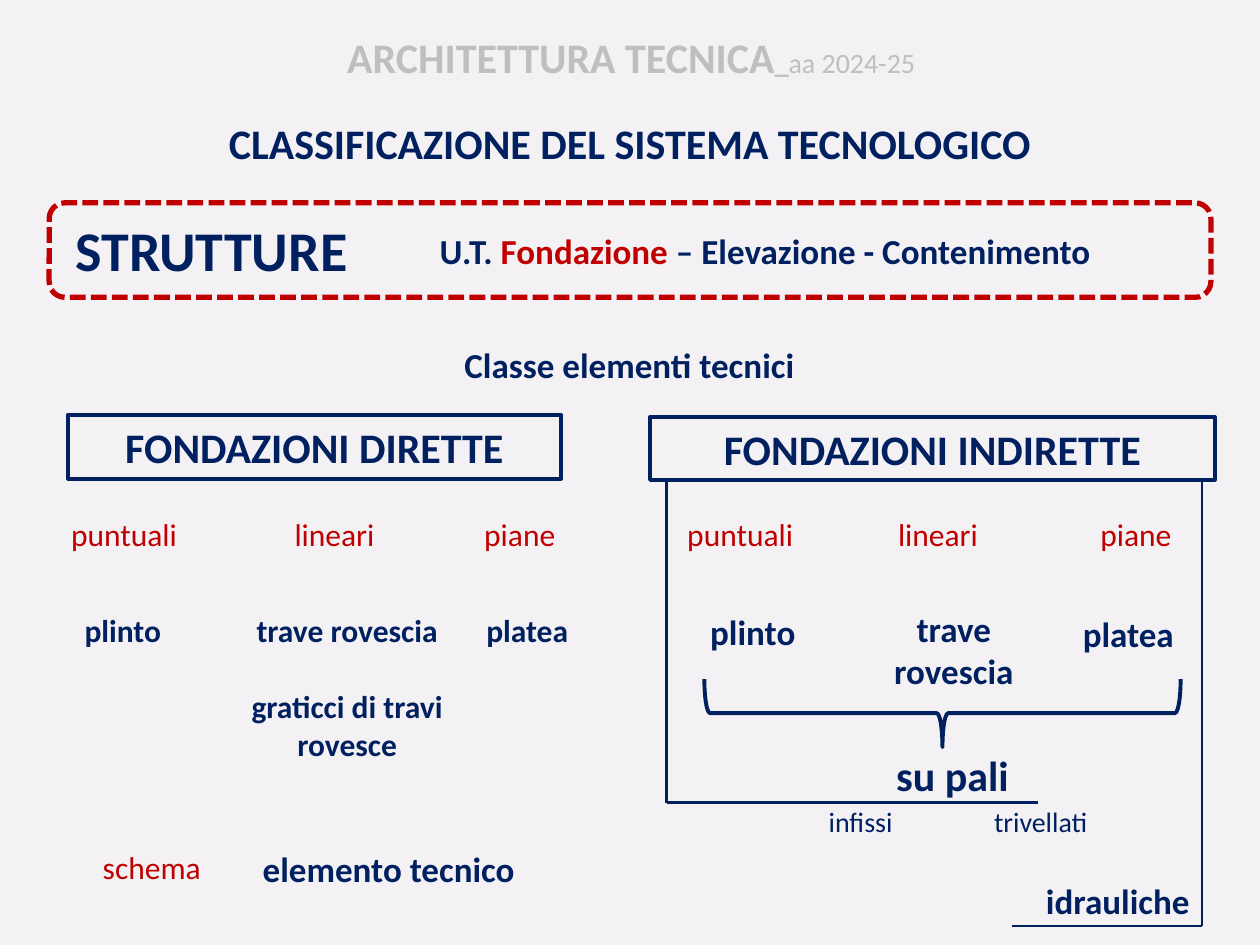
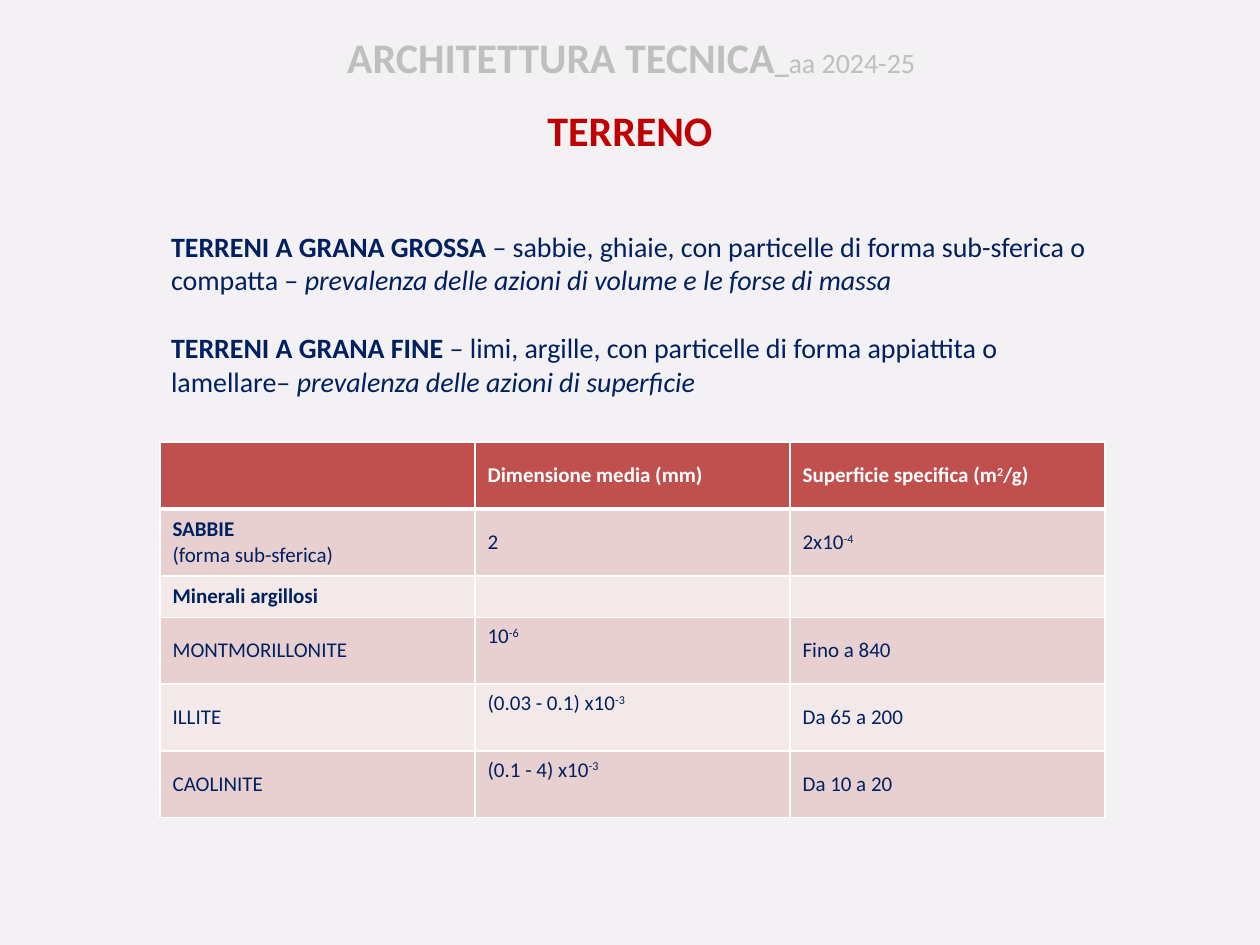
import dataclasses

import lxml.etree
import pptx
import pptx.dml.color
import pptx.enum.dml
import pptx.enum.shapes
import pptx.enum.text
import pptx.oxml.ns
import pptx.util

Inches = pptx.util.Inches
Pt = pptx.util.Pt
Align = pptx.enum.text.PP_ALIGN
Anchor = pptx.enum.text.MSO_ANCHOR
Shape = pptx.enum.shapes.MSO_SHAPE


@dataclasses.dataclass(frozen=True)
class Theme:
    font: str = "Calibri"
    background: str = "F3F1F3"
    navy: str = "002060"
    red: str = "C00000"
    gray: str = "BFBFBF"
    white: str = "FFFFFF"
    table_header: str = "C0504D"
    bands: tuple = ("E8D0D0", "F4E9E9")
    display: int = 32
    title: int = 24
    heading: int = 20
    label: int = 18
    body: int = 16
    cell: int = 12


theme = Theme()


def style(size, color=theme.navy, bold=False, italic=False):
    return {"size": Pt(size), "color": color, "bold": bold, "italic": italic}


STYLES = {
    "course": style(theme.title, theme.gray, True),
    "course_joint": style(theme.body, theme.gray, True),
    "course_year": style(theme.body, theme.gray),
    "title": style(theme.title, bold=True),
    "red_title": style(theme.title, theme.red, True),
    "display": style(theme.display, bold=True),
    "heading": style(theme.heading, bold=True),
    "red_heading": style(theme.heading, theme.red, True),
    "element": style(theme.label, bold=True),
    "scheme": style(theme.label, theme.red),
    "body": style(theme.body),
    "body_bold": style(theme.body, bold=True),
    "body_italic": style(theme.body, italic=True),
    "cell": style(theme.cell),
    "cell_bold": style(theme.cell, bold=True),
    "cell_header": style(theme.cell, theme.white, True),
}

COURSE = [[("ARCHITETTURA TECNICA", "course"), ("_", "course_joint"), ("aa 2024-25", "course_year")]]

UNITS = [[("U.T. ", "heading"), ("Fondazione", "red_heading"),
          (" – Elevazione - Contenimento", "heading")]]

LABELS = [
    ("Classe elementi tecnici", "heading", (2.87, 2.68, 4.25, 0.44)),
    ("CLASSIFICAZIONE DEL SISTEMA TECNOLOGICO", "title", (0, 0.88, 10, 0.51)),
    ("schema", "scheme", (0.62, 6.68, 1.17, 0.4)),
    ("elemento tecnico", "heading", (1.7, 6.68, 2.77, 0.44)),
    ("plinto", "element", (0.39, 4.8, 1.17, 0.4)),
    ("platea", "element", (3.6, 4.8, 1.17, 0.4)),
    ("plinto", "heading", (5.39, 4.8, 1.17, 0.44)),
    ("trave rovescia", "heading", (6.87, 4.77, 1.4, 0.77)),
    ("platea", "heading", (8.37, 4.81, 1.17, 0.44)),
    ("su pali", "title", (6.46, 5.9, 2.2, 0.5)),
    ("infissi", "body", (6.32, 6.34, 1.02, 0.37)),
    ("trivellati", "body", (7.59, 6.34, 1.34, 0.37)),
]
SCHEMES = ["puntuali", "lineari", "piane"]
SCHEME_LEFTS = [(0.4, 2.07, 3.54), (5.29, 6.86, 8.43)]
BEAMS = [[("trave rovescia", "element")], [("graticci di travi rovesce", "element")]]
FOUNDATIONS = [
    ("FONDAZIONI DIRETTE", (0.54, 3.29, 3.91, 0.51)),
    ("FONDAZIONI INDIRETTE", (5.16, 3.31, 4.48, 0.5)),
]
BRANCHES = [
    [(9.54, 3.81), (9.54, 7.35), (8.03, 7.35)],
    [(5.29, 3.81), (5.29, 6.37), (8.24, 6.37)],
]

SOILS = [
    [("TERRENI A GRANA GROSSA ", "body_bold"),
     ("– sabbie, ghiaie, con particelle di forma sub-sferica o compatta – ", "body"),
     ("prevalenza delle azioni di volume e le forse di massa", "body_italic")],
    [("TERRENI A GRANA FINE ", "body_bold"),
     ("– limi, argille, con particelle di forma appiattita o lamellare– ", "body"),
     ("prevalenza delle azioni di superficie", "body_italic")],
]
COLUMN_WIDTH = 2.5
ROW_HEIGHTS = [0.53, 0.53, 0.33, 0.53, 0.53, 0.53]
TABLE_ROWS = [
    ["", "Dimensione media (mm)", "Superficie specifica (m^2^/g)"],
    ["*SABBIE\n(forma sub-sferica)", "2", "2x10^-4"],
    ["*Minerali argillosi", "", ""],
    ["MONTMORILLONITE", "10^-6", "Fino a 840"],
    ["ILLITE", "(0.03 - 0.1) x10^-3", "Da 65 a 200"],
    ["CAOLINITE", "(0.1 - 4) x10^-3", "Da 10 a 20"],
]
FIRST_MINERAL_ROW = 3


def rgb(value):
    return pptx.dml.color.RGBColor.from_string(value)


def assign(target, values):
    for name, value in values.items():
        setattr(target, name, value)


def add_run(paragraph, text, style_name):
    run = paragraph.add_run()
    run.text = text
    values = dict(STYLES[style_name], name=theme.font)
    run.font.color.rgb = rgb(values.pop("color"))
    assign(run.font, values)
    return run


def write(frame, paragraphs, align=Align.CENTER, gap=0, spacing=None):
    frame.word_wrap = True
    for index, runs in enumerate(paragraphs):
        paragraph = frame.add_paragraph() if index else frame.paragraphs[0]
        assign(paragraph, {"alignment": align, "line_spacing": spacing,
                           "space_before": Pt(gap if index else 0)})
        for text, style_name in runs:
            add_run(paragraph, text, style_name)


def add_text(slide, box, paragraphs, anchor=Anchor.TOP, **options):
    frame = slide.shapes.add_textbox(*map(Inches, box)).text_frame
    frame.vertical_anchor = anchor
    write(frame, paragraphs, **options)


def add_outline(slide, kind, box, color, width):
    shape = slide.shapes.add_shape(kind, *map(Inches, box))
    shape.shadow.inherit = False
    shape.fill.background()
    shape.line.color.rgb = rgb(color)
    shape.line.width = Pt(width)
    return shape


def add_line(slide, start, end):
    line = slide.shapes.add_connector(
        pptx.enum.shapes.MSO_CONNECTOR.STRAIGHT, *map(Inches, start + end))
    line.line.color.rgb = rgb(theme.navy)
    line.line.width = Pt(1.5)
    lxml.etree.SubElement(line._element.spPr, pptx.oxml.ns.qn("a:effectLst"))


def add_slide(presentation):
    slide = presentation.slides.add_slide(presentation.slide_layouts[6])
    slide.background.fill.solid()
    slide.background.fill.fore_color.rgb = rgb(theme.background)
    add_text(slide, (1.26, -0.01, 7.5, 0.97), COURSE, Anchor.MIDDLE, spacing=0.9)
    return slide


def build_classification(presentation):
    slide = add_slide(presentation)
    add_text(slide, (0.5, 1.66, 2.99, 0.64), [[("STRUTTURE", "display")]], align=Align.LEFT)
    add_text(slide, (3.39, 1.77, 6.21, 0.44), UNITS, align=Align.LEFT)
    band = add_outline(slide, Shape.ROUNDED_RECTANGLE, (0.39, 1.61, 9.22, 0.75), theme.red, 3)
    band.line.dash_style = pptx.enum.dml.MSO_LINE.SQUARE_DOT
    for text, style_name, box in LABELS:
        add_text(slide, box, [[(text, style_name)]])
    for lefts in SCHEME_LEFTS:
        for text, left in zip(SCHEMES, lefts):
            add_text(slide, (left, 4.04, 1.17, 0.4), [[(text, "scheme")]])
    add_text(slide, (1.86, 4.8, 1.79, 1.31), BEAMS, gap=22)
    add_text(slide, (6.93, 6.93, 2.61, 0.44), [[("idrauliche", "heading")]], align=Align.RIGHT)
    for text, box in FOUNDATIONS:
        frame = add_outline(slide, Shape.RECTANGLE, box, theme.navy, 2.25).text_frame
        write(frame, [[(text, "title")]])
    brace = add_outline(slide, Shape.LEFT_BRACE, (7.21, 3.77, 0.54, 3.78), theme.navy, 2.25)
    brace.rotation = 270
    for points in BRANCHES:
        for start, end in zip(points, points[1:]):
            add_line(slide, start, end)


def add_border(cell, side, width):
    properties = cell._tc.get_or_add_tcPr()
    line = lxml.etree.SubElement(properties, pptx.oxml.ns.qn("a:" + side), w=str(Pt(width)))
    fill = lxml.etree.SubElement(line, pptx.oxml.ns.qn("a:solidFill"))
    lxml.etree.SubElement(fill, pptx.oxml.ns.qn("a:srgbClr"), val=theme.white)


def fill_cell(cell, text, row):
    for side in ("lnL", "lnR", "lnT", "lnB"):
        thick = (row, side) in ((0, "lnB"), (1, "lnT"))
        add_border(cell, side, 3 if thick else 1)
    cell.fill.solid()
    cell.fill.fore_color.rgb = rgb(theme.bands[(row - 1) % 2] if row else theme.table_header)
    raised = row >= FIRST_MINERAL_ROW and "^" in text
    cell.vertical_anchor = Anchor.TOP if raised else Anchor.MIDDLE
    for index, line in enumerate(text.split("\n")):
        frame = cell.text_frame
        paragraph = frame.add_paragraph() if index else frame.paragraphs[0]
        style_name = "cell_bold" if line.startswith("*") else "cell"
        if row == 0:
            style_name = "cell_header"
        for part, piece in enumerate(line.lstrip("*").split("^")):
            if piece:
                run = add_run(paragraph, piece, style_name)
                if part % 2:
                    run.font._element.set("baseline", "30000")
        if not line:
            paragraph._p.get_or_add_endParaRPr().set("sz", str(theme.cell * 100))


def build_soil(presentation):
    slide = add_slide(presentation)
    add_text(slide, (3.73, 0.78, 2.54, 0.51), [[("TERRENO", "red_title")]])
    add_text(slide, (1.26, 1.77, 7.5, 1.45), SOILS, align=Align.LEFT, gap=19.5)
    columns = len(TABLE_ROWS[0])
    box = (1.27, 3.51, COLUMN_WIDTH * columns, sum(ROW_HEIGHTS))
    table = slide.shapes.add_table(len(TABLE_ROWS), columns, *map(Inches, box)).table
    for column in table.columns:
        column.width = Inches(COLUMN_WIDTH)
    for row, (height, texts) in enumerate(zip(ROW_HEIGHTS, TABLE_ROWS)):
        table.rows[row].height = Inches(height)
        for column, text in enumerate(texts):
            fill_cell(table.cell(row, column), text, row)


def main():
    presentation = pptx.Presentation()
    assign(presentation, {"slide_width": Inches(10), "slide_height": Inches(7.5)})
    build_classification(presentation)
    build_soil(presentation)
    presentation.save("out.pptx")


if __name__ == "__main__":
    main()
